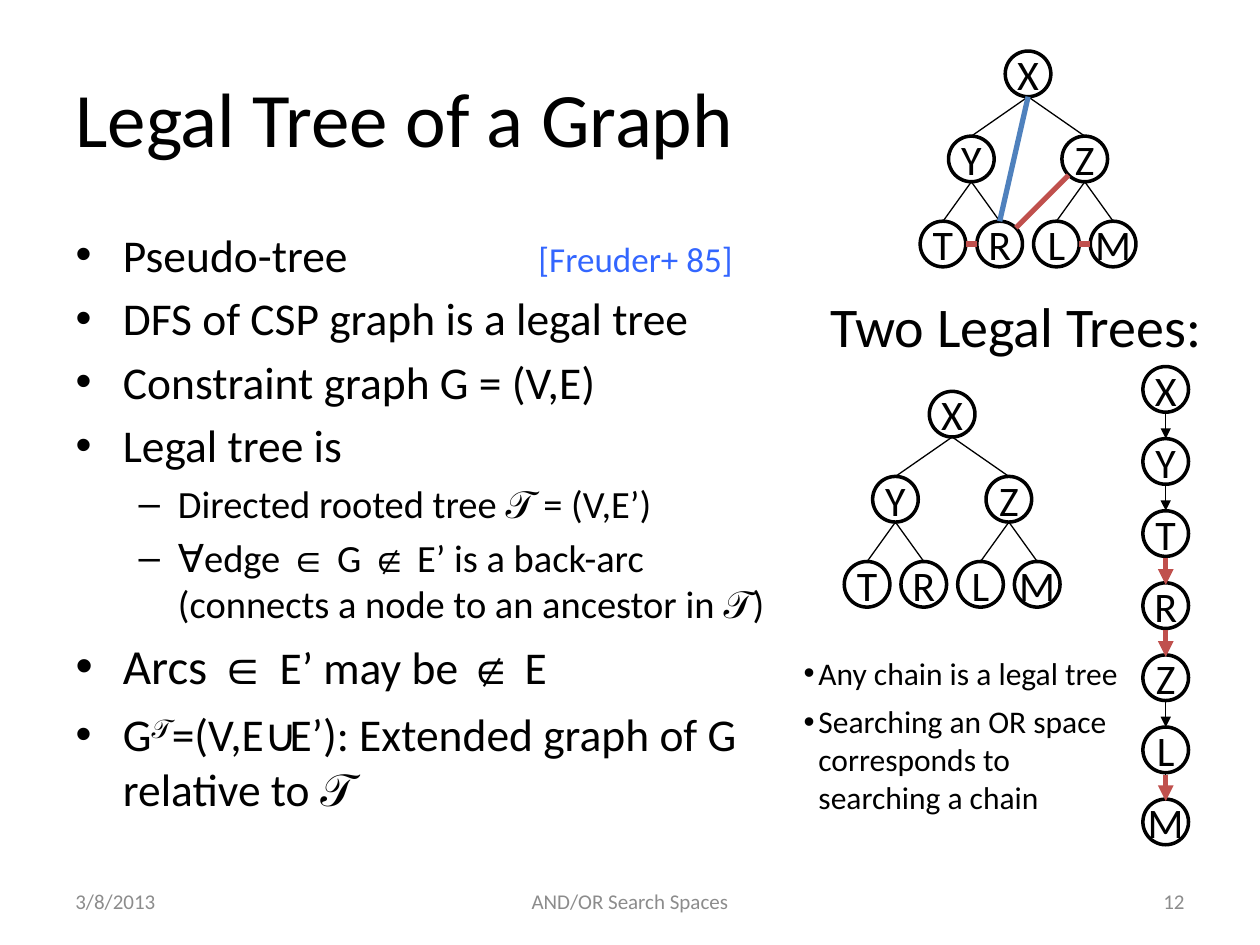
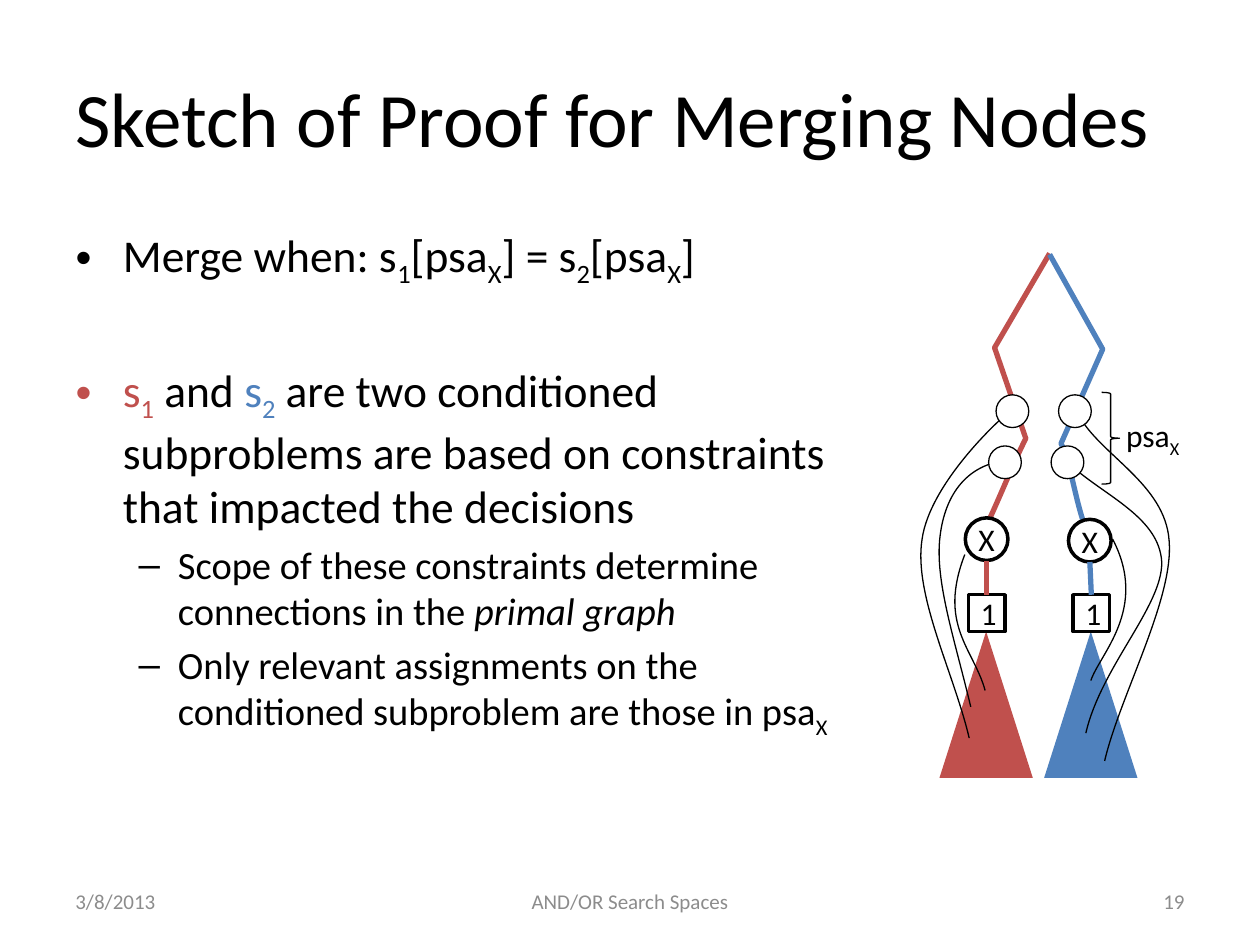
import pptx
import pptx.util
import pptx.dml.color
import pptx.enum.shapes
import pptx.enum.text
import pptx.oxml.ns
import lxml.etree

BLACK, WHITE, GREY = "000000", "FFFFFF", "8C8C8C"
RED, BLUE, CITATION = "C0504D", "4F81BD", "3366FF"
SHAPE = pptx.enum.shapes.MSO_SHAPE
ALIGN = pptx.enum.text.PP_ALIGN
ANCHOR = pptx.enum.text.MSO_ANCHOR
Pt = pptx.util.Pt

NODE = 0.92
TREE_STEP, ROW_STEP, CHAIN_STEP = 3.43 / 6, 1.715, 8.72 / 6
TREE_CELLS = {"X": (3, 0), "Y": (1, 1), "Z": (5, 1),
              "T": (0, 2), "R": (2, 2), "L": (4, 2), "M": (6, 2)}
TREE_EDGES = ["XY", "XZ", "YT", "YR", "ZL", "ZM"]


def cm(*lengths):
    return [pptx.util.Cm(length) for length in lengths]


def rgb(code):
    return pptx.dml.color.RGBColor.from_string(code)


def add_xml(parent, tag, **attributes):
    name = pptx.oxml.ns.qn(tag)
    return lxml.etree.SubElement(parent, name, attributes)


def write(paragraph, pieces, size, color=BLACK):
    for piece in pieces:
        text, style = (piece, {}) if isinstance(piece, str) else piece
        run = paragraph.add_run()
        run.text = text
        run.font.name = style.get("font", "Calibri")
        run.font.size = Pt(style.get("size", size))
        run.font.color.rgb = rgb(style.get("color", color))
        if "italic" in style:
            run.font.italic = True
        if "baseline" in style:
            run.font._element.set("baseline", str(style["baseline"] * 1000))


def sub(text, color=BLACK):
    return text, {"baseline": -25, "color": color}


def symbol(text, size):
    return text, {"font": "Times New Roman", "size": size}


def place(part, box):
    part.left, part.top, part.width, part.height = cm(*box)


def add_title(slide, text):
    title = slide.shapes.title
    place(title, (1.27, 0.76, 22.86, 3.18))
    title.text_frame.text = text
    title.text_frame.auto_size = pptx.enum.text.MSO_AUTO_SIZE.NONE
    paragraph = title.text_frame.paragraphs[0]
    paragraph.alignment = ALIGN.LEFT
    font = paragraph.runs[0].font
    font.name, font.size, font.color.rgb = "Calibri", Pt(44), rgb(BLACK)


def fill_body(body, box, items):
    place(body, box)
    frame = body.text_frame
    frame.auto_size = pptx.enum.text.MSO_AUTO_SIZE.NONE
    for index, (level, pieces) in enumerate(items):
        paragraph = frame.add_paragraph() if index else frame.paragraphs[0]
        paragraph.level = level
        write(paragraph, pieces, (26, 22)[level])
    return frame.paragraphs


def add_text(slide, box, pieces, size, color=BLACK, align=ALIGN.LEFT, anchor=ANCHOR.TOP):
    frame = slide.shapes.add_textbox(*cm(*box)).text_frame
    frame.word_wrap = True
    frame.vertical_anchor = anchor
    frame.paragraphs[0].alignment = align
    write(frame.paragraphs[0], pieces, size, color)
    return frame


def add_footer(slide, number):
    for left, width, text, align in ((1.27, 5.92, "3/8/2013", ALIGN.LEFT),
                                     (8.68, 8.04, "AND/OR Search Spaces", ALIGN.CENTER),
                                     (18.21, 5.92, str(number), ALIGN.RIGHT)):
        add_text(slide, (left, 17.65, width, 1.02), [text], 12, GREY, align, ANCHOR.MIDDLE)


def style_shape(shape, fill=None, line=None, width=0.75):
    shape.shadow.inherit = False
    if fill:
        shape.fill.solid()
        shape.fill.fore_color.rgb = rgb(fill)
    else:
        shape.fill.background()
    if line:
        shape.line.color.rgb = rgb(line)
        shape.line.width = Pt(width)
    else:
        shape.line.fill.background()


def add_shape(shapes, kind, box, fill=None, line=None, width=0.75):
    shape = shapes.add_shape(kind, *cm(*box))
    style_shape(shape, fill, line, width)
    return shape


def add_label_shape(shapes, kind, left, top, side, label, size):
    frame = add_shape(shapes, kind, (left, top, side, side), WHITE, BLACK, 2).text_frame
    frame.word_wrap = kind == SHAPE.RECTANGLE
    if kind == SHAPE.OVAL:
        frame.margin_left = frame.margin_right = frame.margin_top = frame.margin_bottom = 0
    frame.vertical_anchor = ANCHOR.MIDDLE
    frame.paragraphs[0].alignment = ALIGN.CENTER
    write(frame.paragraphs[0], [label], size)


def add_line(shapes, start, end, color=BLACK, width=0.75, arrow=False):
    line = shapes.add_connector(pptx.enum.shapes.MSO_CONNECTOR.STRAIGHT, *cm(*start, *end))
    line.line.color.rgb = rgb(color)
    line.line.width = Pt(width)
    properties = line._element.spPr
    if arrow:
        add_xml(properties.find(pptx.oxml.ns.qn("a:ln")), "a:tailEnd", type="triangle")
    add_xml(properties, "a:effectLst")


def trace(a, b, c, d, steps=20):
    for step in range(1, steps + 1):
        t = step / steps
        weights = ((1 - t) ** 3, 3 * t * (1 - t) ** 2, 3 * t * t * (1 - t), t ** 3)
        yield tuple(round(sum(w * p[axis] for w, p in zip(weights, (a, b, c, d))))
                    for axis in (0, 1))


def add_outline(shapes, left, top, corners, bends, color=BLACK, width=0.75):
    corners, bends = ([tuple(cm(left + x, top + y)) for x, y in part]
                      for part in (corners, bends))
    curves = [bends[first:first + 3] for first in range(0, len(bends), 3)]
    extent, end = list(corners), corners[-1]
    for curve in curves:
        extent += trace(end, *curve)
        end = curve[-1]
    builder = shapes.build_freeform(*extent[0])
    builder.add_line_segments(extent[1:], close=False)
    outline = builder.convert_to_shape()
    style_shape(outline, None, color, width)

    route = next(outline._element.iter(pptx.oxml.ns.qn("a:path")))
    for segment in list(route)[len(corners):]:
        route.remove(segment)
    for curve in curves:
        segment = add_xml(route, "a:cubicBezTo")
        for x, y in curve:
            add_xml(segment, "a:pt", x=str(x - outline.left), y=str(y - outline.top))


def add_tree(slide, left, top):
    shapes = slide.shapes.add_group_shape().shapes
    centers = {}
    for label, (column, row) in TREE_CELLS.items():
        x, y = left + column * TREE_STEP, top + row * ROW_STEP
        add_label_shape(shapes, SHAPE.OVAL, x, y, NODE, label, 24)
        centers[label] = (x + NODE / 2, y + NODE / 2)
    for parent, child in TREE_EDGES:
        (x1, y1), (x2, y2) = centers[parent], centers[child]
        add_line(shapes, (x1, y1 + NODE / 2), (x2, y2 - NODE / 2))
    return centers


def add_graph(slide, left, top):
    centers = add_tree(slide, left, top)
    radius, diagonal = NODE / 2, NODE / 2 * 0.71

    def link(first, second, offset, color):
        (x1, y1), (x2, y2), (dx, dy) = centers[first], centers[second], offset
        add_line(slide.shapes, (x1 + dx, y1 + dy), (x2 - dx, y2 - dy), color, 3)

    link("X", "R", (0, radius), BLUE)
    link("T", "R", (radius, 0), RED)
    link("Z", "R", (-diagonal, diagonal), RED)
    link("M", "L", (-radius, 0), RED)


def add_chain(slide, left, top, labels, extra_arcs):
    center, gap = left + NODE / 2, CHAIN_STEP - NODE
    tops = [top + index * CHAIN_STEP for index in range(len(labels))]
    for label, y in zip(labels, tops):
        add_label_shape(slide.shapes, SHAPE.OVAL, left, y, NODE, label, 24)
    for y in tops[1:]:
        add_line(slide.shapes, (center, y - gap), (center, y), arrow=True)
    extras = slide.shapes.add_group_shape().shapes
    for pair, y in zip(zip(labels, labels[1:]), tops[1:]):
        if "".join(pair) in extra_arcs:
            y += 0.04
            add_line(extras, (center, y - gap), (center, y), RED, 3, True)


def add_chain_notes(slide, box, notes):
    frame = add_text(slide, box, notes[:1], 18)
    for note in notes[1:]:
        write(frame.add_paragraph(), [note], 18)
    for paragraph in frame.paragraphs:
        paragraph.space_after = Pt(6)
        properties = paragraph._p.get_or_add_pPr()
        indent = pptx.util.Cm(0.3)
        properties.set("marL", str(indent))
        properties.set("indent", str(-indent))
        add_xml(properties, "a:buFont", typeface="Arial")
        add_xml(properties, "a:buChar", char="•")


def add_merge_diagram(slide, left, top):
    shapes = slide.shapes

    def at(x, y, *size):
        return (left + x, top + y, *size)

    add_outline(shapes, left, top, [(2.62, 0.03), (1.51, 1.93), (2.14, 3.76)],
                [(1.88, 4.27), (1.55, 5.11), (1.3, 5.61)], RED, 3)
    add_outline(shapes, left, top, [(2.62, 0.05), (3.69, 1.96), (2.85, 3.86)],
                [(3.07, 4.29), (3.17, 5.28), (3.43, 5.74)], BLUE, 3)

    for color, center, variable, variable_top in ((RED, 1.35, 1.35, 5.36),
                                                  (BLUE, 3.46, 3.43, 5.39)):
        add_label_shape(shapes, SHAPE.OVAL, *at(variable - 0.43, variable_top, 0.86), "X", 18)
        add_shape(shapes, SHAPE.ISOSCELES_TRIANGLE, at(center - 0.95, 7.65, 1.88, 2.95), color)
        add_label_shape(shapes, SHAPE.RECTANGLE, *at(center - 0.37, 6.91, 0.74), "1", 18)
        add_line(shapes, at(center, 6.91), at(variable, variable_top + 0.86), color, 3)

    add_shape(shapes, SHAPE.RIGHT_BRACE, at(3.67, 2.83, 0.36, 1.85), None, BLACK)
    add_text(slide, at(3.91, 3.18, 2.03, 1.02), ["psa", sub("X")], 18)

    arcs = [
        [(1.93, 3.12), (1.55, 3.4), (0.2, 4.7), (0.05, 5.79),
         (-0.13, 6.91), (0.69, 8.48), (1, 9.8)],
        [(1.91, 4.19), (0.97, 4.22), (0.51, 4.88), (0.41, 5.74),
         (0.3, 6.63), (0.71, 7.82), (1.03, 9.17)],
        [(3.2, 3.28), (3.63, 4.09), (4.95, 4.67), (5.03, 5.82),
         (5.13, 6.99), (4.04, 8.94), (3.73, 10.26)],
        [(3.07, 4.32), (3.76, 4.93), (4.83, 5.36), (4.88, 6.25),
         (4.9, 7.14), (3.66, 8.36), (3.35, 9.7)],
        [(0.91, 6.1), (0.36, 7.52), (1.09, 8), (1.32, 8.84)],
        [(3.89, 5.79), (4.62, 7.19), (3.63, 8.1), (3.45, 8.64)],
    ]
    for arc in arcs:
        add_outline(shapes, left, top, arc[:1], arc[1:])
    for x, y in ((1.39, 3.91), (1.54, 2.88), (2.65, 3.91), (2.8, 2.88)):
        add_shape(shapes, SHAPE.OVAL, at(x, y, 0.66, 0.66), WHITE, BLACK)


def build_legal_tree(deck):
    slide = deck.slides.add_slide(deck.slide_layouts[3])
    add_title(slide, "Legal Tree of a Graph")
    definitions = fill_body(slide.placeholders[1], (1.27, 4.44, 14.71, 9.91), [
        (0, ["Pseudo-tree\t", ("[Freuder+ 85]", {"size": 20, "color": CITATION})]),
        (0, ["DFS of CSP graph is a legal tree"]),
        (0, ["Constraint graph G = (V,E)"]),
        (0, ["Legal tree is"]),
        (1, ["Directed rooted tree 𝒯 = (V,E’)"]),
        (1, ["∀edge ", symbol("∈ ", 22), "G ", symbol("∉", 22),
             " E’ is a back-arc (connects a node to an ancestor in 𝒯)"]),
        (0, [("Arcs ", {"size": 28}), symbol("∈ ", 28), "E’ may be ", symbol("∉", 26), " E"]),
    ])
    tabs = add_xml(definitions[0]._p.get_or_add_pPr(), "a:tabLst")
    add_xml(tabs, "a:tab", pos=str(pptx.util.Cm(13.97)), algn="r")
    fill_body(slide.placeholders[2], (1.27, 14.11, 14.71, 2.9), [
        (0, ["G", ("𝒯", {"baseline": 30}), "=(V,E∪E’): Extended graph of G relative to 𝒯"]),
    ])
    add_graph(slide, 18.55, 1.03)
    add_text(slide, (16.49, 5.75, 8.18, 1.63), ["Two Legal Trees:"], 32)
    add_tree(slide, 17.02, 7.89)
    add_chain(slide, 23.04, 7.39, "XYTRZLM", {"TR", "RZ", "LM"})
    add_chain_notes(slide, (15.95, 13.06, 7.06, 3.56), [
        "Any chain is a legal tree",
        "Searching an OR space corresponds to searching a chain"])
    add_footer(slide, 12)


def build_merge_proof(deck):
    slide = deck.slides.add_slide(deck.slide_layouts[1])
    add_title(slide, "Sketch of Proof for Merging Nodes")
    steps = fill_body(slide.placeholders[1], (1.27, 4.45, 16.43, 12.55), [
        (0, ["Merge when: s", sub("1"), "[psa", sub("X"), "] = s", sub("2"),
             "[psa", sub("X"), "]"]),
        (0, [("s", {"color": RED}), sub("1", RED), " and ", ("s", {"color": BLUE}),
             sub("2", BLUE), " are two conditioned subproblems are based on constraints "
             "that impacted the decisions"]),
        (1, ["Scope of these constraints determine connections in the ",
             ("primal graph", {"italic": True})]),
        (1, ["Only relevant assignments on the conditioned subproblem are those in psa",
             sub("X")]),
    ])
    steps[1].space_before = Pt(41.5)
    add_merge_diagram(slide, 18.54, 5.08)
    add_footer(slide, 19)


def main():
    deck = pptx.Presentation()
    deck.slide_width, deck.slide_height = cm(25.4, 19.05)
    build_legal_tree(deck)
    build_merge_proof(deck)
    deck.save("out.pptx")


if __name__ == "__main__":
    main()
